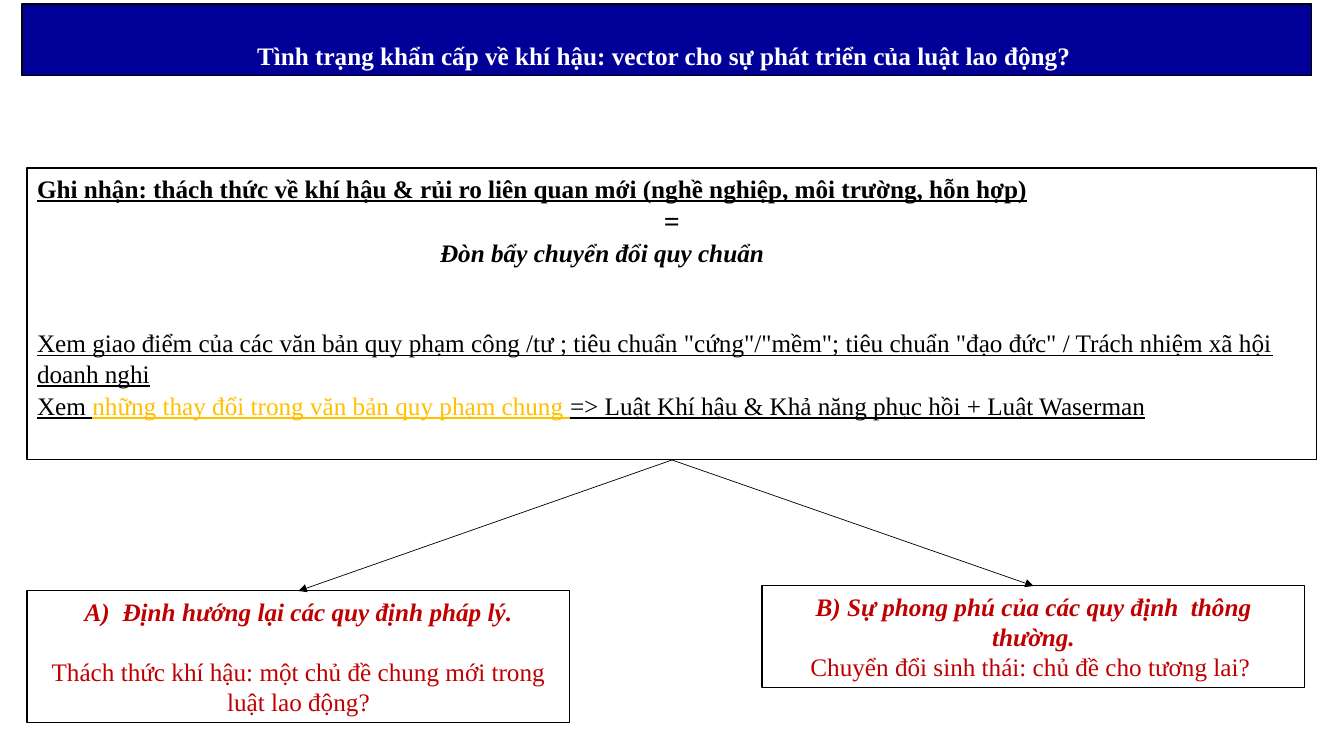
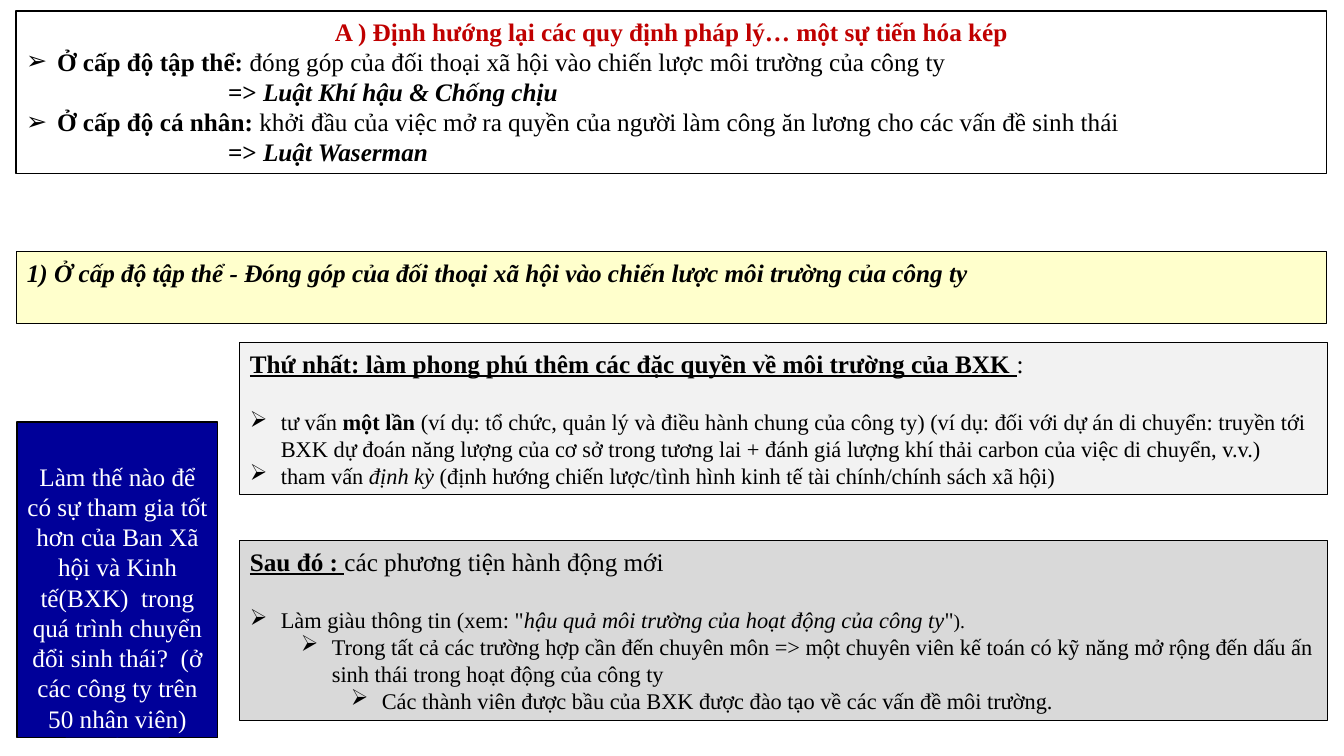
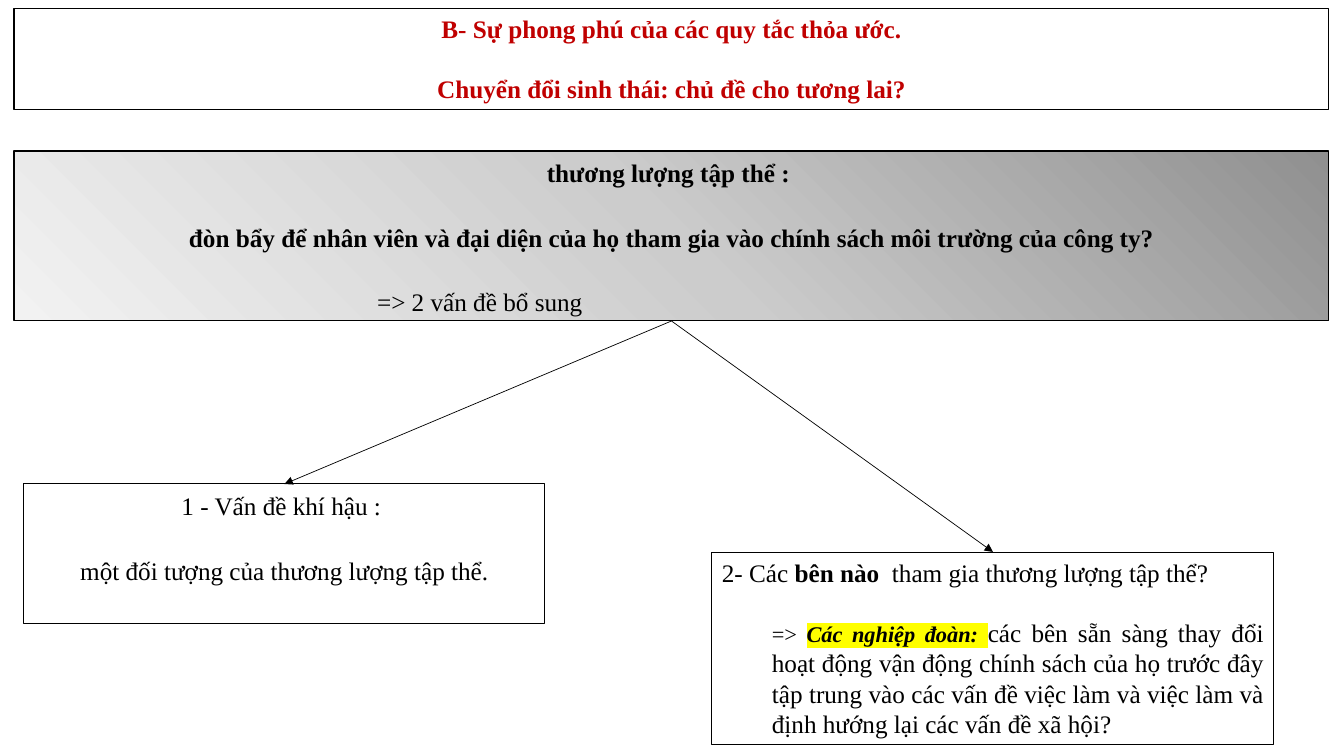
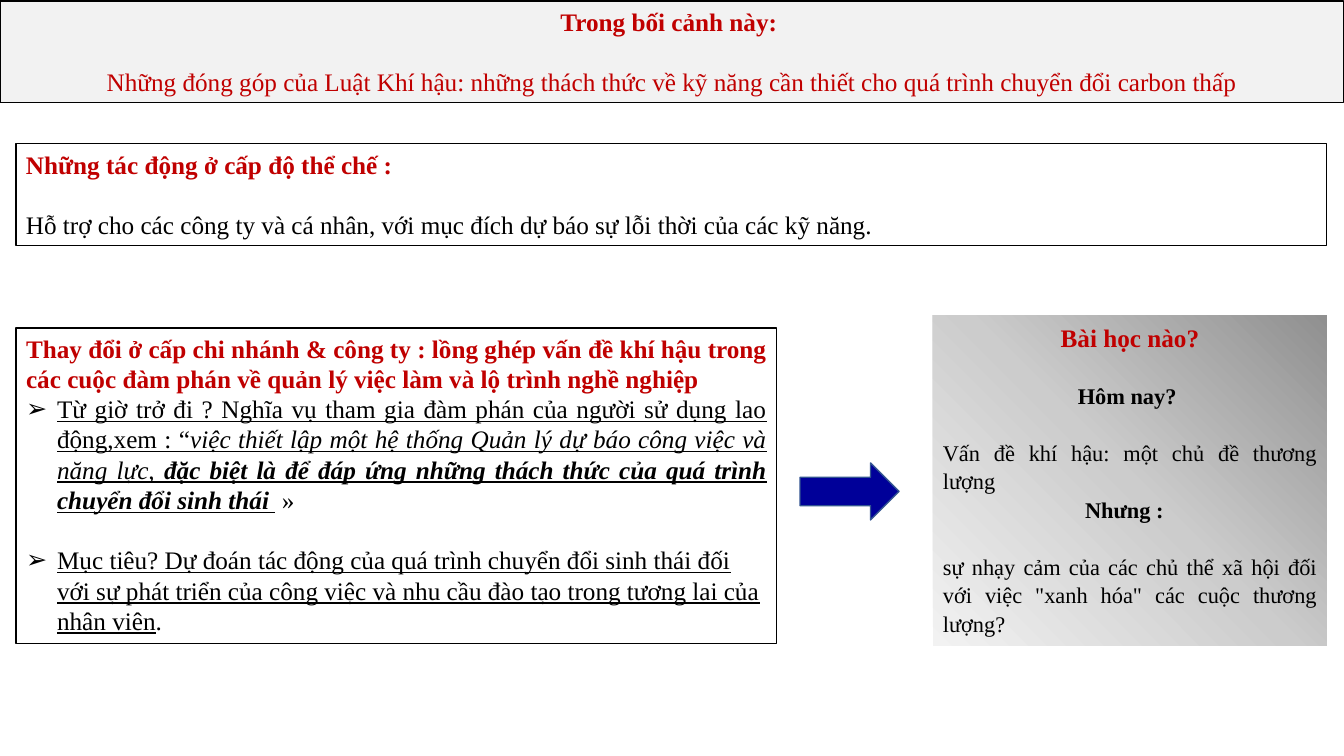
from lxml import etree
from pptx import Presentation
from pptx.dml.color import RGBColor
from pptx.enum.shapes import MSO_CONNECTOR, MSO_SHAPE
from pptx.enum.text import MSO_ANCHOR, MSO_AUTO_SIZE, PP_ALIGN
from pptx.oxml.ns import qn
from pptx.util import Pt

# Shared scale, colours and formats
PX = 914400 / 100.8
BLACK, WHITE, RED, NAVY = "000000", "FFFFFF", "C00000", "000099"
PALE, GREY, CREAM, GOLD, YELLOW = "F2F2F2", "D9D9D9", "FFFFCC", "FFC000", "FFFF00"
ARROW_LINE = "325491"
SHADES = [(0, "909090"), (50000, "CCCCCC"), (100000, "F2F2F2")]

B, I, U = {"bold": True}, {"italic": True}, {"underline": True}
S16 = {"size": Pt(16)}
RUN = {"name": "Times New Roman", "size": Pt(18), "bold": False,
       "italic": False, "underline": False, "color": BLACK}
PARA = {"alignment": PP_ALIGN.LEFT, "space_before": Pt(0), "line_spacing": 1.0}
CENTER = {"alignment": PP_ALIGN.CENTER}
JUSTIFY = {"alignment": PP_ALIGN.JUSTIFY}
LOOSE = {"line_spacing": 1.06}
GAP = {"space_before": Pt(21.6)}
LOOSE_GAP = {**LOOSE, "space_before": Pt(22.9)}
SMALL_GAP = {**LOOSE, "space_before": Pt(20.4)}
ARROW_LIST = {"left": 31, "hang": 31, "bullet": "➢"}


def box(sp, rect, paras, base={}, fill=None, line=BLACK, anchor=MSO_ANCHOR.TOP, top=5):
    """Place and style a shape; paras holds (paragraph format, [(text, run format)])."""
    sp.left, sp.top, sp.width, sp.height = [round(v * PX) for v in rect]
    if not sp.is_placeholder:
        sp.shadow.inherit = False
    if fill is SHADES:
        sp.fill.gradient()
        grad = sp._element.spPr.find(qn("a:gradFill"))
        grad.clear()
        stops = etree.SubElement(grad, qn("a:gsLst"))
        for pos, shade in SHADES:
            gs = etree.SubElement(stops, qn("a:gs"), pos=str(pos))
            etree.SubElement(gs, qn("a:srgbClr"), val=shade)
        focus = etree.SubElement(grad, qn("a:path"), path="circle")
        etree.SubElement(focus, qn("a:fillToRect"), l="100000", b="100000")
    elif fill:
        sp.fill.solid()
        sp.fill.fore_color.rgb = RGBColor.from_string(fill)
    else:
        sp.fill.background()
    if line:
        sp.line.color.rgb = RGBColor.from_string(line)
        sp.line.width = Pt(0.75)
    else:
        sp.line.fill.background()
    tf = sp.text_frame
    tf.word_wrap = True
    tf.auto_size = MSO_AUTO_SIZE.NONE
    tf.vertical_anchor = anchor
    tf.margin_top = round(top * PX)
    for n, (pfmt, runs) in enumerate(paras):
        p = tf.add_paragraph() if n else tf.paragraphs[0]
        pfmt = {**PARA, **pfmt}
        pPr = p._p.get_or_add_pPr()
        pPr.set("marL", str(round(pfmt.pop("left", 0) * PX)))
        pPr.set("indent", str(round(-pfmt.pop("hang", 0) * PX)))
        bullet = pfmt.pop("bullet", None)
        for key, value in pfmt.items():
            setattr(p, key, value)
        if bullet == "A)":
            etree.SubElement(pPr, qn("a:buAutoNum"), type="alphaUcParenR")
        elif bullet:
            etree.SubElement(pPr, qn("a:buChar"), char=bullet)
        else:
            etree.SubElement(pPr, qn("a:buNone"))
        for text, rfmt in runs:
            r = p.add_run()
            r.text = text
            rfmt = {**RUN, **base, **rfmt}
            r.font.color.rgb = RGBColor.from_string(rfmt.pop("color"))
            mark = rfmt.pop("highlight", None)
            for key, value in rfmt.items():
                setattr(r.font, key, value)
            if mark:
                hl = etree.Element(qn("a:highlight"))
                etree.SubElement(hl, qn("a:srgbClr"), val=mark)
                r.font._element.find(qn("a:solidFill")).addnext(hl)
    return sp


def arrow(s, upper, lower):
    """Join the bottom of one box to the top of another."""
    c = s.shapes.add_connector(MSO_CONNECTOR.STRAIGHT, 0, 0, 0, 0)
    c.begin_connect(upper, 2)
    c.end_connect(lower, 0)
    c.line.color.rgb = RGBColor.from_string(BLACK)
    c.line.width = Pt(0.5)
    spPr = c._element.spPr
    etree.SubElement(spPr.find(qn("a:ln")), qn("a:tailEnd"), type="triangle")
    etree.SubElement(spPr, qn("a:effectLst"))


prs = Presentation()
prs.slide_width, prs.slide_height = round(1344 * PX), round(756 * PX)
slides = [prs.slides.add_slide(prs.slide_layouts[1]) for _ in range(4)]
RECT = (MSO_SHAPE.RECTANGLE, 0, 0, 0, 0)

# Slide 1: climate emergency
s = slides[0]
box(s.shapes.title, (22, 4, 1290, 72), [
    (CENTER, [("Tình trạng khẩn cấp về khí hậu: vector cho sự phát triển của luật lao động? ", B)]),
], {"color": WHITE}, NAVY, anchor=MSO_ANCHOR.BOTTOM)
finding = box(s.placeholders[1], (27, 168, 1290, 292), [
    ({}, [("Ghi nhận: thách thức về khí hậu & rủi ro liên quan mới (nghề nghiệp, môi trường, hỗn hợp)", {**B, **U})]),
    (CENTER, [("=", {**B, "size": Pt(20)})]),
    ({"left": 403}, [("Đòn bẩy chuyển đổi quy chuẩn", {**B, **I})]),
    ({"space_before": Pt(43.2)}, [
        ("Xem giao điểm của các văn bản quy phạm công /tư ; tiêu chuẩn \"cứng\"/\"mềm\"; "
         "tiêu chuẩn \"đạo đức\" / Trách nhiệm xã hội doanh nghi", U)]),
    ({**JUSTIFY, **LOOSE}, [
        ("Xem ", U),
        ("những thay đổi trong văn bản quy phạm chung ", {**U, "color": GOLD}),
        ("=> Luật Khí hậu & Khả năng phục hồi + Luật Waserman", U)]),
])
branches = [
    ((27, 591, 543, 132), [
        ({**CENTER, "left": 38, "hang": 38, "bullet": "A)"},
         [("Định hướng lại các quy định pháp lý.", {**B, **I})]),
        ({**CENTER, **GAP}, [("Thách thức khí hậu: một chủ đề chung mới trong luật lao động?", {})])]),
    ((762, 586, 543, 102), [
        (CENTER, [("B) Sự phong phú của các quy định  thông thường.", {**B, **I})]),
        (CENTER, [("Chuyển đổi sinh thái: chủ đề cho tương lai? ", {})])]),
]
for rect, paras in branches:
    arrow(s, finding, box(s.shapes.add_shape(*RECT), rect, paras, {"color": RED}))

# Slide 2: collective level
s = slides[1]
box(s.shapes.title, (16, 11, 1311, 35), [
    (CENTER, [("A ) Định hướng lại các quy định pháp lý… một sự tiến hóa kép", B)]),
], {"color": RED}, line=None)
box(s.placeholders[1], (16, 11, 1311, 163), [
    (ARROW_LIST, [("Ở cấp độ tập thể: ", B),
                  ("đóng góp của đối thoại xã hội vào chiến lược môi trường của công ty", {})]),
    ({"left": 202}, [("=> ", B), ("Luật Khí hậu & Chống chịu", {**B, **I})]),
    (ARROW_LIST, [("Ở cấp độ cá nhân: ", B),
                  ("khởi đầu của việc mở ra quyền của người làm công ăn lương cho các vấn đề sinh thái", {})]),
    ({"left": 202}, [("=> ", B), ("Luật Waserman", {**B, **I})]),
], top=35)
box(s.shapes.add_shape(*RECT), (17, 252, 1310, 72), [
    ({}, [("1) Ở cấp độ tập thể - Đóng góp của đối thoại xã hội vào chiến lược môi trường của công ty", {**B, **I})]),
], fill=CREAM)
box(s.shapes.add_shape(*RECT), (240, 343, 1088, 152), [
    (JUSTIFY, [("Thứ nhất: làm phong phú thêm các đặc quyền về môi trường của BXK ", {**B, **U}), (":", {})]),
    ({**ARROW_LIST, **GAP}, [
        ("tư vấn ", S16), ("một lần ", {**S16, **B}),
        ("(ví dụ: tổ chức, quản lý và điều hành chung của công ty) (ví dụ: đối với dự án di chuyển: "
         "truyền tới BXK dự đoán năng lượng của cơ sở trong tương lai + đánh giá lượng khí thải carbon "
         "của việc di chuyển, v.v.)", S16)]),
    (ARROW_LIST, [
        ("tham vấn ", S16), ("định kỳ ", {**S16, **I}),
        ("(định hướng chiến lược/tình hình kinh tế tài chính/chính sách xã hội)", S16)]),
], fill=PALE)
box(s.shapes.add_shape(*RECT), (17, 422, 201, 316), [
    (CENTER, [("Làm thế nào để có sự tham gia tốt hơn của Ban Xã hội và Kinh tế(BXK)  trong quá trình "
               "chuyển đổi sinh thái?  (ở các công ty trên 50 nhân viên)", {})]),
], {"color": WHITE}, NAVY, anchor=MSO_ANCHOR.BOTTOM)
box(s.shapes.add_shape(*RECT), (240, 541, 1088, 180), [
    ({}, [("Sau đó : ", {**B, **U}), ("các phương tiện hành động mới", {})]),
    ({**ARROW_LIST, **GAP}, [
        ("Làm giàu thông tin (xem: \"", S16),
        ("hậu quả môi trường của hoạt động của công ty", {**S16, **I}),
        ("\"", S16), (").", {"size": Pt(14)})]),
    ({**ARROW_LIST, "left": 82, "level": 1}, [
        ("Trong tất cả các trường hợp cần đến chuyên môn => một chuyên viên kế toán có kỹ năng "
         "mở rộng đến dấu ấn sinh thái trong hoạt động của công ty", S16)]),
    ({**ARROW_LIST, "left": 132, "level": 2}, [
        ("Các thành viên được bầu của BXK được đào tạo về các vấn đề môi trường.", S16)]),
], fill=GREY)

# Slide 3: collective bargaining
s = slides[2]
box(s.shapes.title, (14, 8, 1315, 102), [
    (CENTER, [("B- Sự phong phú của các quy tắc thỏa ước.", B)]),
    ({**CENTER, **GAP}, [("Chuyển đổi sinh thái: chủ đề cho tương lai?", B)]),
], {"color": RED})
bargaining = box(s.placeholders[1], (14, 151, 1315, 170), [
    ({**CENTER, **LOOSE}, [("thương lượng tập thể : ", B)]),
    ({**CENTER, **LOOSE_GAP}, [
        ("đòn bẩy để nhân viên và đại diện của họ tham gia vào chính sách môi trường của công ty?", B)]),
    ({**JUSTIFY, **LOOSE_GAP, "left": 353}, [("=> 2 vấn đề bổ sung", {})]),
], fill=SHADES)
questions = [
    ((24, 484, 521, 140), [
        ({**CENTER, **LOOSE}, [("1 - Vấn đề khí hậu : ", {})]),
        ({**CENTER, **LOOSE_GAP}, [("một đối tượng của thương lượng tập thể.", {})])]),
    ((712, 552, 562, 193), [
        ({}, [("2- Các ", {}), ("bên nào  ", B), ("tham gia thương lượng tập thể?", {})]),
        ({**JUSTIFY, **GAP, "left": 50, "level": 1}, [
            ("=> ", S16), ("Các nghiệp đoàn: ", {**S16, **B, **I, "highlight": YELLOW}),
            ("các bên sẵn sàng thay đổi hoạt động vận động chính sách của họ trước đây tập trung vào "
             "các vấn đề việc làm và việc làm và định hướng lại các vấn đề xã hội? ", {})])]),
]
for rect, paras in questions:
    arrow(s, bargaining, box(s.shapes.add_shape(*RECT), rect, paras))

# Slide 4: skills and lessons
s = slides[3]
box(s.shapes.title, (0, 1, 1344, 102), [
    (CENTER, [("Trong bối cảnh này: ", B)]),
    ({**CENTER, **GAP}, [
        ("Những đóng góp của Luật Khí hậu: những thách thức về kỹ năng cần thiết cho quá trình "
         "chuyển đổi carbon thấp", {})]),
], {"color": RED}, PALE)
box(s.shapes.add_shape(*RECT), (16, 144, 1311, 102), [
    ({}, [("Những tác động ở cấp độ thể chế :", {**B, "color": RED})]),
    ({**JUSTIFY, **GAP}, [
        ("Hỗ trợ cho các công ty và cá nhân, với mục đích dự báo sự lỗi thời của các kỹ năng. ", {})]),
])
box(s.placeholders[1], (16, 328, 761, 316), [
    (JUSTIFY, [("Thay đổi ở cấp chi nhánh & công ty : lồng ghép vấn đề khí hậu trong các cuộc đàm phán "
                "về quản lý việc làm và lộ trình nghề nghiệp", {**B, "color": RED})]),
    ({**ARROW_LIST, **JUSTIFY}, [
        ("Từ giờ trở đi ? Nghĩa vụ tham gia đàm phán của người sử dụng lao động,xem : “", U),
        ("việc thiết lập một hệ thống Quản lý dự báo công việc và năng lực, ", {**U, **I}),
        ("đặc biệt là để đáp ứng những thách thức của quá trình chuyển đổi sinh thái ", {**U, **I, **B}),
        (" »", {})]),
    ({**ARROW_LIST, **GAP}, [
        ("Mục tiêu? Dự đoán tác động của quá trình chuyển đổi sinh thái đối với sự phát triển của "
         "công việc và nhu cầu đào tạo trong tương lai của nhân viên", U), (".", {})]),
])
box(s.shapes.add_shape(*RECT), (933, 315, 394, 331), [
    ({**CENTER, **LOOSE}, [("Bài học nào?", {**B, "color": RED, "size": Pt(18)})]),
    ({**CENTER, **SMALL_GAP}, [("Hôm nay? ", B)]),
    ({**JUSTIFY, **SMALL_GAP}, [("Vấn đề khí hậu: một chủ đề thương lượng", {})]),
    ({**CENTER, **LOOSE}, [("Nhưng :  ", B)]),
    ({**JUSTIFY, **SMALL_GAP}, [
        ("sự nhạy cảm của các chủ thể xã hội đối với việc \"xanh hóa\" các cuộc thương lượng? ", {})]),
], S16, SHADES, line=None)
pointer = box(s.shapes.add_shape(MSO_SHAPE.RIGHT_ARROW, 0, 0, 0, 0), (800, 463, 99, 57), [],
              fill=NAVY, line=ARROW_LINE)
pointer.line.width = Pt(1)

prs.save("out.pptx")
